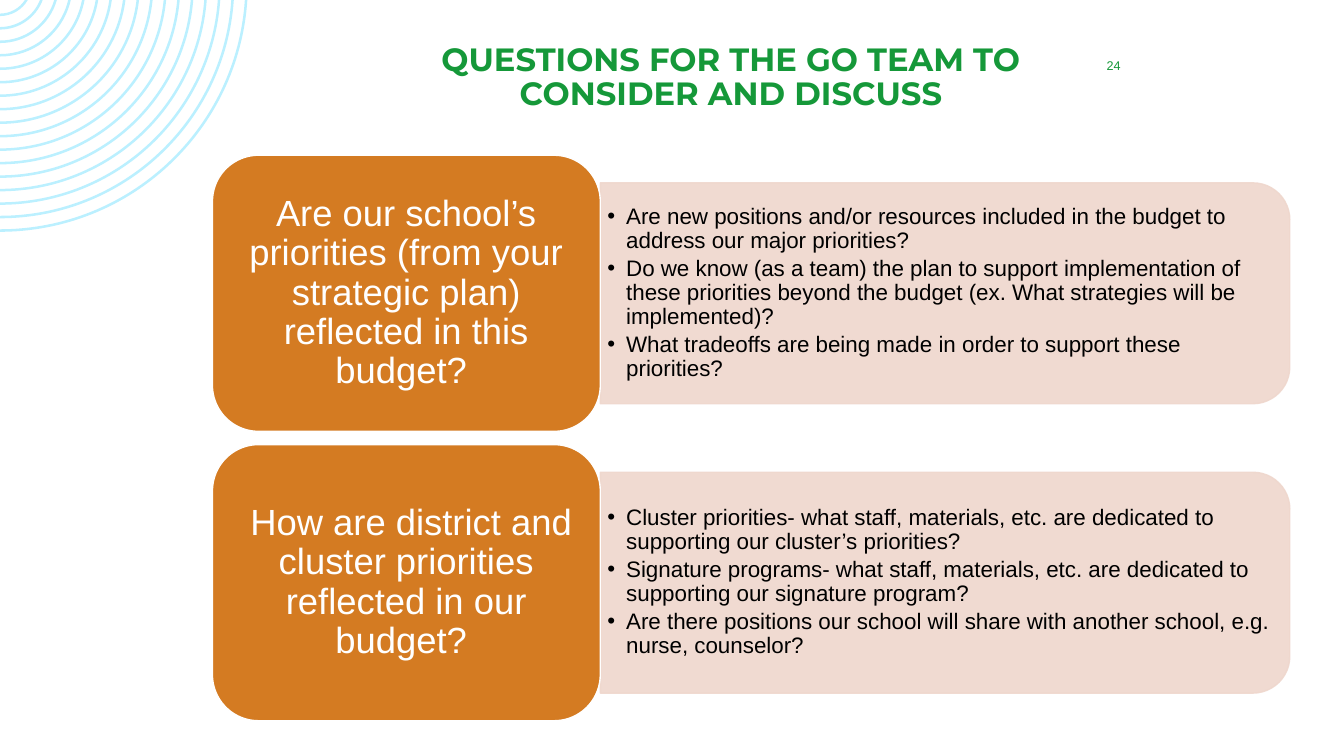
from math import asin, cos, pi, sin, tan

from lxml import etree
from pptx import Presentation
from pptx.dml.color import RGBColor
from pptx.enum import shapes, text
from pptx.oxml.ns import qn
from pptx.util import Pt

GREEN = RGBColor(0x15, 0x98, 0x39)
ORANGE = RGBColor(0xD4, 0x7B, 0x22)
PINK = RGBColor(0xEF, 0xD7, 0xCD)
SKY = RGBColor(0xBB, 0xF0, 0xFF)
WHITE = RGBColor(0xFF, 0xFF, 0xFF)
BLACK = RGBColor(0, 0, 0)

TOPICS = [
    ("Are our school’s priorities (from your strategic plan) reflected in this budget? ",
     ["Are new positions and/or resources included in the budget to address our major priorities?",
      "Do we know (as a team) the plan to support implementation of these priorities beyond "
      "the budget (ex. What strategies will be implemented)?",
      "What tradeoffs are being made in order to support these priorities?"]),
    (" How are district and cluster priorities reflected in our budget? ",
     ["Cluster priorities- what staff, materials, etc. are dedicated to supporting our "
      "cluster’s priorities?",
      "Signature programs- what staff, materials, etc. are dedicated to supporting our "
      "signature program?",
      "Are there positions our school will share with another school, e.g. nurse, counselor?"]),
]


def place(shape, left, top, width, height):
    shape.left, shape.top = Pt(left), Pt(top)
    shape.width, shape.height = Pt(width), Pt(height)


def set_frame(shape, side, edge, anchor=text.MSO_ANCHOR.MIDDLE):
    frame = shape.text_frame
    frame.word_wrap = True
    frame.auto_size = text.MSO_AUTO_SIZE.NONE
    frame.vertical_anchor = anchor
    frame.margin_left = frame.margin_right = Pt(side)
    frame.margin_top = frame.margin_bottom = Pt(edge)
    return frame


def add_run(para, words, size, color, font="Arial", bold=False):
    run = para.add_run()
    run.text = words
    run.font.name, run.font.size, run.font.bold = font, Pt(size), bold
    run.font.color.rgb = color


def fade(fill, percent):
    """Make every solid colour below the given element partly clear."""
    for color in fill.iter(qn("a:srgbClr")):
        etree.SubElement(color, qn("a:alpha")).set("val", str(percent * 1000))


def add_bullet(para, indent):
    props = para._p.get_or_add_pPr()
    props.set("marL", str(Pt(indent)))
    props.set("indent", str(-Pt(indent)))
    etree.SubElement(props, qn("a:buFont")).set("typeface", "Arial")
    etree.SubElement(props, qn("a:buChar")).set("char", "•")


def bend(shape, count):
    """Turn the two arcs of each ring, three lines apiece, into curves."""
    lines = list(shape.element.iter(qn("a:lnTo")))
    for first in (7 * ring + side for ring in range(count) for side in (0, 4)):
        curve = etree.Element(qn("a:cubicBezTo"))
        lines[first].addprevious(curve)
        for line in lines[first:first + 3]:
            curve.append(line[0])
            line.getparent().remove(line)


def draw_rings(slide, count=17, first=23, step=9.63, thick=1.8, rise=11.5):
    """Draw quarter rings around a centre that lies above the slide's corner."""
    unit = 100

    def arc(radius):
        """Give the ends and handles of a curve from the top edge to the left edge."""
        start = asin(rise / radius)
        pull = 4 / 3 * tan((pi / 2 - start) / 4)
        x, y = cos(start), sin(start)
        knots = [(x, y), (x - pull * y, y + pull * x), (pull, 1), (0, 1)]
        return [(unit * radius * a, unit * (radius * b - rise)) for a, b in knots]

    build = slide.shapes.build_freeform(*arc(first)[0], scale=Pt(1) / unit)
    for ring in range(count):
        radius = first + ring * step
        outer = arc(radius)
        if ring:
            build.move_to(*outer[0])
        build.add_line_segments(outer[1:] + arc(radius - thick)[::-1], close=True)
    rings = build.convert_to_shape()
    bend(rings, count)
    rings.shadow.inherit = False
    rings.fill.solid()
    rings.fill.fore_color.rgb = SKY
    rings.line.fill.background()


def write_title(title, left, top, width, height):
    place(title, left, top, width, height)
    para = set_frame(title, 7.2, 3.6, text.MSO_ANCHOR.TOP).paragraphs[0]
    para.alignment = text.PP_ALIGN.CENTER
    para.line_spacing = 0.9
    add_run(para, "QUESTIONS FOR THE GO TEAM TO CONSIDER AND DISCUSS",
            23, GREEN, "Montserrat", True)


def add_number(slide, left, top, width, height):
    box = slide.shapes.add_textbox(Pt(left), Pt(top), Pt(width), Pt(height))
    para = set_frame(box, 7.2, 3.6).paragraphs[0]
    para.alignment = text.PP_ALIGN.CENTER
    para.space_after = Pt(6)
    add_run(para, "24", 9, GREEN)


def add_box(slide, kind, left, top, width, height, fill, line):
    box = slide.shapes.add_shape(kind, Pt(left), Pt(top), Pt(width), Pt(height))
    box.shadow.inherit = False
    box.fill.solid()
    box.fill.fore_color.rgb = fill
    box.line.color.rgb = line
    box.line.width = Pt(1)
    return box


def add_topic(slide, body, topic, left, top, width, height):
    """Place a question card with its panel of bullets to the right."""
    question, points = topic
    card, deep = 277, height * 0.8
    wide = width - card
    mid = top + height / 2

    # The panel is drawn upright, then turned so its round corners face right.
    panel = add_box(slide, shapes.MSO_SHAPE.ROUND_2_SAME_RECTANGLE,
                    left + card + (wide - deep) / 2, mid - wide / 2, deep, wide, PINK, PINK)
    panel.rotation = 90
    fade(panel.element.spPr, 90)

    place(body, left + card, mid - 71, wide - 7.5, 142)
    frame = set_frame(body, 5, 2.5)
    for k, point in enumerate(points):
        para = frame.add_paragraph() if k else frame.paragraphs[0]
        para.alignment = text.PP_ALIGN.LEFT
        para.line_spacing = 0.9
        para.space_before, para.space_after = Pt(0), Pt(2.6)
        add_bullet(para, 13.5)
        add_run(para, point, 16, BLACK)
    slide.shapes.element.append(body.element)

    box = add_box(slide, shapes.MSO_SHAPE.ROUNDED_RECTANGLE,
                  left, top, card, height, ORANGE, WHITE)
    para = set_frame(box, 7.8, 3.9).paragraphs[0]
    para.alignment = text.PP_ALIGN.CENTER
    para.line_spacing = 0.9
    add_run(para, question, 26, WHITE)


def main():
    deck = Presentation()
    deck.slide_width, deck.slide_height = Pt(960), Pt(540)
    slide = deck.slides.add_slide(deck.slide_layouts[3])
    title, *bodies = list(slide.placeholders)[:3]
    draw_rings(slide)
    write_title(title, 249.8, 27.4, 545, 60.5)
    add_number(slide, 766.3, 36, 58.3, 21.6)
    for k, (body, topic) in enumerate(zip(bodies, TOPICS)):
        add_topic(slide, body, topic, 151.8, 110.9 + k * 206.7, 769.5, 197.2)
    deck.save("out.pptx")


if __name__ == "__main__":
    main()
